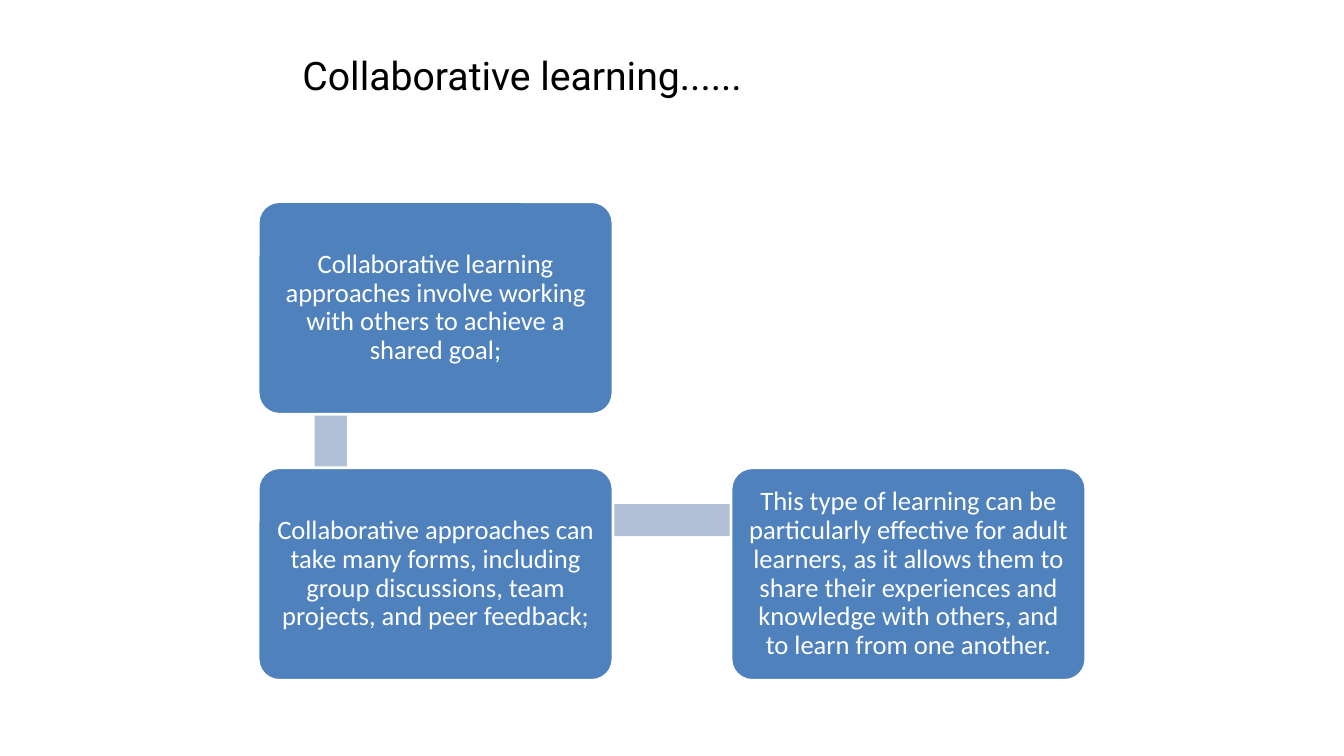
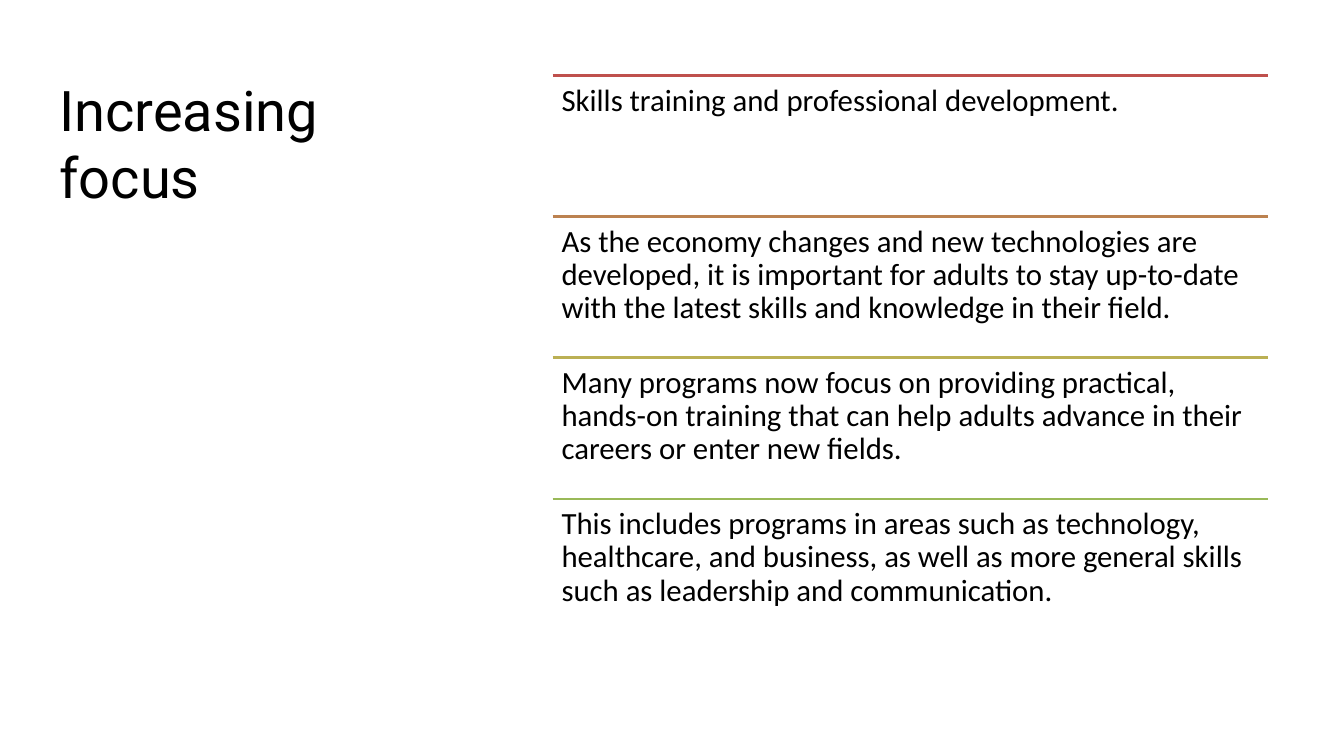
from itertools import pairwise

from lxml import etree
from pptx import Presentation
from pptx.dml.color import RGBColor
from pptx.enum.shapes import MSO_CONNECTOR, MSO_SHAPE
from pptx.enum.text import MSO_ANCHOR, PP_ALIGN
from pptx.oxml.ns import qn
from pptx.util import Pt

PX = 9144  # EMU in one px, 100 px to the inch
SLIDE_SIZE = (1333, 750)
THEME = {
    "title": {"name": "Roboto", "color": "000000"},
    "card_text": {"name": "Calibri", "size": 19, "color": "FFFFFF"},
    "row_text": {"name": "Calibri", "size": 22, "color": "000000"},
    "card": "4F81BD",
    "card_edge": "FFFFFF",
    "path_bar": "B1C0D7",
    "line_width": 2,
    "line_spacing": 0.9,
}

COLLABORATION = {
    "title": "Collaborative learning......",
    "title_size": 28,
    "title_box": (300, 51, 734, 49),
    "steps": [  # column, row, text
        (0, 0, "Collaborative learning approaches involve working with others "
               "to achieve a shared goal;"),
        (0, 1, "Collaborative approaches can take many forms, including group "
               "discussions, team projects, and peer feedback;"),
        (1, 1, "This type of learning can be particularly effective for adult "
               "learners, as it allows them to share their experiences and "
               "knowledge with others, and to learn from one another."),
    ],
}
FOCUS = {
    "title": "Increasing focus",
    "title_size": 40,
    "title_box": (59, 75, 304, 558),
    "points": [  # rule colour, text
        ("BF504D", "Skills training and professional development."),
        ("BC8250", "As the economy changes and new technologies are developed, "
                   "it is important for adults to stay up-to-date with the "
                   "latest skills and knowledge in their field."),
        ("BBB054", "Many programs now focus on providing practical, hands-on "
                   "training that can help adults advance in their careers or "
                   "enter new fields."),
        ("99B958", "This includes programs in areas such as technology, "
                   "healthcare, and business, as well as more general skills "
                   "such as leadership and communication."),
    ],
}

CARD_LEFT, CARD_TOP, CARD_WIDTH, CARD_HEIGHT = 256, 200, 352, 211
COLUMN_PITCH, ROW_PITCH = 469, 264
BAR_OFFSET_X, BAR_OFFSET_Y, BAR_THICKNESS = 72, 52, 32
POINT_LEFT, POINT_TOP, POINT_WIDTH, POINT_HEIGHT = 548, 75, 710, 140


def emu(*lengths):
    return [round(length * PX) for length in lengths]


def write(shape, text, style, inset=0, anchor=MSO_ANCHOR.TOP,
          align=PP_ALIGN.LEFT, spacing=1.0):
    frame = shape.text_frame
    margins = {f"margin_{side}": inset * PX
               for side in ("left", "top", "right", "bottom")}
    for name, value in {"word_wrap": True, "vertical_anchor": anchor, **margins}.items():
        setattr(frame, name, value)
    paragraph = frame.paragraphs[0]
    paragraph.alignment, paragraph.line_spacing = align, spacing
    run = paragraph.add_run()
    run.text = text
    run.font.name, run.font.size = style["name"], Pt(style["size"])
    run.font.color.rgb = RGBColor.from_string(style["color"])


def paint_line(line, color):
    line.color.rgb = RGBColor.from_string(color)
    line.width = Pt(THEME["line_width"])


def add_block(slide, preset, box, fill):
    """Add a filled preset shape with no outline or shadow."""
    block = slide.shapes.add_shape(preset, *emu(*box))
    block.shadow.inherit = False
    block.fill.solid()
    block.fill.fore_color.rgb = RGBColor.from_string(fill)
    block.line.fill.background()
    return block


def add_titled_slide(deck, content):
    slide = deck.slides.add_slide(deck.slide_layouts[6])
    title = slide.shapes.add_textbox(*emu(*content["title_box"]))
    write(title, content["title"], {**THEME["title"], "size": content["title_size"]})
    return slide


def add_step_path(slide, steps):
    """Draw the bars from step to step, then the cards over them."""
    corners = [(CARD_LEFT + column * COLUMN_PITCH, CARD_TOP + row * ROW_PITCH)
               for column, row, _ in steps]
    half = BAR_THICKNESS // 2
    for (x1, y1), (x2, y2) in pairwise(corners):
        grow_x, grow_y = (half, 0) if x1 == x2 else (0, half)
        bar = (x1 + BAR_OFFSET_X - grow_x, y1 + BAR_OFFSET_Y - grow_y,
               x2 - x1 + 2 * grow_x, y2 - y1 + 2 * grow_y)
        add_block(slide, MSO_SHAPE.RECTANGLE, bar, THEME["path_bar"])
    for corner, (_, _, text) in zip(corners, steps):
        card = add_block(slide, MSO_SHAPE.ROUNDED_RECTANGLE,
                         (*corner, CARD_WIDTH, CARD_HEIGHT), THEME["card"])
        card.adjustments[0] = 0.1
        paint_line(card.line, THEME["card_edge"])
        write(card, text, THEME["card_text"], 8, MSO_ANCHOR.MIDDLE,
              PP_ALIGN.CENTER, THEME["line_spacing"])


def add_ruled_points(slide, points):
    for index, (color, text) in enumerate(points):
        top = POINT_TOP + index * POINT_HEIGHT
        rule = slide.shapes.add_connector(
            MSO_CONNECTOR.STRAIGHT,
            *emu(POINT_LEFT, top, POINT_LEFT + POINT_WIDTH, top))
        paint_line(rule.line, color)
        etree.SubElement(rule._element.spPr, qn("a:effectLst"))
        point = slide.shapes.add_textbox(
            *emu(POINT_LEFT, top, POINT_WIDTH, POINT_HEIGHT))
        write(point, text, THEME["row_text"], 9, spacing=THEME["line_spacing"])


def main():
    deck = Presentation()
    deck.slide_width, deck.slide_height = emu(*SLIDE_SIZE)
    add_step_path(add_titled_slide(deck, COLLABORATION), COLLABORATION["steps"])
    add_ruled_points(add_titled_slide(deck, FOCUS), FOCUS["points"])
    deck.save("out.pptx")


if __name__ == "__main__":
    main()
